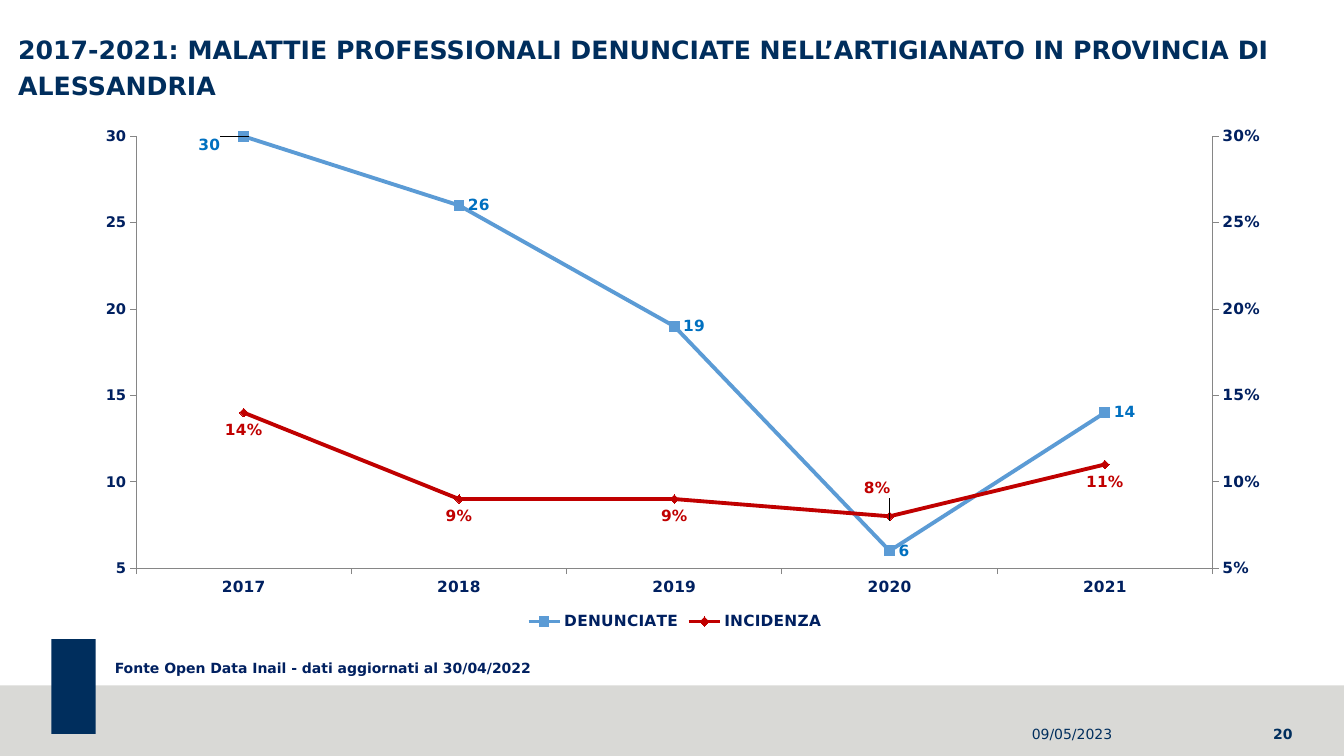
from copy import deepcopy
from lxml.etree import SubElement
from pptx import Presentation
from pptx.chart.axis import ValueAxis
from pptx.chart.data import CategoryChartData
from pptx.dml.color import RGBColor
from pptx.enum.chart import XL_CHART_TYPE, XL_LABEL_POSITION, XL_LEGEND_POSITION, XL_MARKER_STYLE
from pptx.enum.shapes import MSO_SHAPE
from pptx.enum.text import MSO_ANCHOR, PP_ALIGN
from pptx.oxml import parse_xml
from pptx.oxml.ns import nsdecls, qn
from pptx.util import Inches, Pt

FACE = "DejaVu Sans"
NAVY, INK = "002E5D", "002060"
TITLE = "2017-2021: MALATTIE PROFESSIONALI DENUNCIATE NELL’ARTIGIANATO IN PROVINCIA DI ALESSANDRIA"
BARS = [((0, 6.8, 13.33, 0.7), "D9D9D6"), ((0.51, 6.34, 0.44, 0.94), NAVY)]
NOTES = [
    ("20", (11.23, 7.08, 1.59, 0.4), NAVY, True, PP_ALIGN.RIGHT, 0),
    ("Fonte Open Data Inail - dati aggiornati al 30/04/2022",
     (1.04, 6.49, 11.79, 0.27), INK, True, PP_ALIGN.LEFT, 0.1),
    ("09/05/2023", (9.45, 7.08, 1.58, 0.4), NAVY, False, PP_ALIGN.RIGHT, 0),
]
YEARS = ["2017", "2018", "2019", "2020", "2021"]
SERIES = [
    dict(name="DENUNCIATE", vals=[30, 26, 19, 6, 14], form="0", line="5B9BD5",
         text="0070C0", mark=XL_MARKER_STYLE.SQUARE, size=7,
         side=XL_LABEL_POSITION.RIGHT, point=0, shift=(-0.044, 0.017)),
    dict(name="INCIDENZA", vals=[0.14, 0.09, 0.09, 0.08, 0.11], form="0%", line="C00000",
         text="C00000", mark=XL_MARKER_STYLE.DIAMOND, size=6,
         side=XL_LABEL_POSITION.BELOW, point=3, shift=(-0.01, -0.088)),
]


def color(code):
    return RGBColor.from_string(code)


def style(font, size, code, bold=True):
    font.name, font.size, font.bold = FACE, Pt(size), bold
    font.color.rgb = color(code)


def place(shape, box):
    shape.left, shape.top, shape.width, shape.height = map(Inches, box)


def layout(spot, inner=False):
    root = parse_xml(f"<c:layout {nsdecls('c')}><c:manualLayout/></c:layout>")
    parts = [("layoutTarget", "inner")] if inner else []
    if len(spot) == 4:
        parts += [("xMode", "edge"), ("yMode", "edge")]
    parts += zip("xywh", spot)
    for tag, val in parts:
        SubElement(root[0], qn("c:" + tag)).set("val", str(val))
    return root


def scale(axis, low, high, step, form):
    axis.minimum_scale, axis.maximum_scale, axis.major_unit = low, high, step
    axis.tick_labels.number_format = form
    axis.tick_labels.number_format_is_linked = False


def paint(series, item):
    series.smooth = False
    series.format.line.width = Pt(2.75)
    series.format.line.color.rgb = color(item["line"])
    mark = series.marker
    mark.style, mark.size = item["mark"], item["size"]
    mark.format.fill.solid()
    mark.format.fill.fore_color.rgb = color(item["line"])
    mark.format.line.color.rgb = color(item["line"])
    tags = series.data_labels
    tags.show_value = True
    tags.number_format, tags.number_format_is_linked = item["form"], False
    tags.position = item["side"]
    style(tags.font, 11, item["text"])
    tag = series.points[item["point"]].data_label
    tag.position = item["side"]
    style(tag.font, 11, item["text"])
    for node in series.data_labels._element.findall(qn("c:dLbl")):
        node.find(qn("c:idx")).addnext(layout(item["shift"]))


def split(chart):
    plot = chart.element.find(".//" + qn("c:plotArea"))
    old = plot.find(qn("c:layout"))
    if old is not None:
        plot.remove(old)
    plot.insert(0, layout((0.063, 0.03, 0.873, 0.84), True))
    val = plot.find(qn("c:valAx"))
    if val.find(qn("c:crossBetween")) is None:
        val.find(qn("c:crosses")).addnext(
            parse_xml(f'<c:crossBetween {nsdecls("c")} val="between"/>'))
    left = plot.find(qn("c:lineChart"))
    right = deepcopy(left)
    left.remove(left.findall(qn("c:ser"))[1])
    right.remove(right.find(qn("c:ser")))
    left.addnext(right)
    cat = deepcopy(plot.find(qn("c:catAx")))
    pct = deepcopy(val)
    val.addnext(pct)
    pct.addnext(cat)
    for node, code in zip(right.findall(qn("c:axId")), ("5001", "5002")):
        node.set("val", code)
    for axis, own, mate in ((cat, "5001", "5002"), (pct, "5002", "5001")):
        axis.find(qn("c:axId")).set("val", own)
        axis.find(qn("c:crossAx")).set("val", mate)
    cat.find(qn("c:delete")).set("val", "1")
    pct.find(qn("c:axPos")).set("val", "r")
    pct.find(qn("c:crosses")).set("val", "max")
    axis = ValueAxis(pct)
    axis.has_major_gridlines = False
    axis.tick_labels.font.size = Pt(11)
    scale(axis, 0.05, 0.3, 0.05, "0%")


def graph(slide):
    data = CategoryChartData()
    data.categories = YEARS
    for item in SERIES:
        data.add_series(item["name"], item["vals"], item["form"])
    box = map(Inches, (0.58, 1.2, 12.23, 5.1))
    chart = slide.shapes.add_chart(XL_CHART_TYPE.LINE_MARKERS, *box, data).chart
    chart.has_title = False
    chart.font.name, chart.font.size = "Calibri", Pt(10)
    chart.has_legend = True
    legend = chart.legend
    legend.position, legend.include_in_layout = XL_LEGEND_POSITION.BOTTOM, False
    style(legend.font, 11, INK)
    legend._element.find(qn("c:legendPos")).addnext(layout((0.058, 0.945, 0.88, 0.05)))
    for axis, size in ((chart.category_axis, 11), (chart.value_axis, 10.5)):
        style(axis.tick_labels.font, size, INK)
        axis.format.line.color.rgb = color("868686")
    rise = chart.value_axis
    grid = rise.major_gridlines.format.line
    grid.color.rgb, grid.width = color("FFFFFF"), Pt(0.75)
    scale(rise, 5, 30, 5, "0")
    plot = chart.plots[0]
    plot.vary_by_categories = False
    for series, item in zip(plot.series, SERIES):
        paint(series, item)
    split(chart)


def main():
    deck = Presentation()
    deck.slide_width, deck.slide_height = Inches(13.33), Inches(7.5)
    slide = deck.slides.add_slide(deck.slide_layouts[5])
    for box, code in BARS:
        bar = slide.shapes.add_shape(MSO_SHAPE.RECTANGLE, *map(Inches, box))
        bar.shadow.inherit = False
        bar.fill.solid()
        bar.fill.fore_color.rgb = color(code)
        bar.line.fill.background()
    title = slide.shapes.title
    place(title, (0.18, 0.28, 13, 0.76))
    frame = title.text_frame
    frame.margin_left = frame.margin_right = frame.margin_top = frame.margin_bottom = 0
    frame.vertical_anchor = MSO_ANCHOR.TOP
    line = frame.paragraphs[0]
    line.alignment, line.line_spacing = PP_ALIGN.LEFT, 1.2
    run = line.add_run()
    run.text = TITLE
    style(run.font, 18, NAVY)
    for text, box, code, bold, align, pad in NOTES:
        frame = slide.shapes.add_textbox(*map(Inches, box)).text_frame
        frame.word_wrap = True
        frame.margin_left = frame.margin_right = Inches(pad)
        frame.margin_top = frame.margin_bottom = Inches(pad / 2)
        frame.vertical_anchor = MSO_ANCHOR.TOP if pad else MSO_ANCHOR.MIDDLE
        line = frame.paragraphs[0]
        line.alignment = align
        run = line.add_run()
        run.text = text
        style(run.font, 10, code, bold)
    graph(slide)
    deck.save("out.pptx")


if __name__ == "__main__":
    main()
